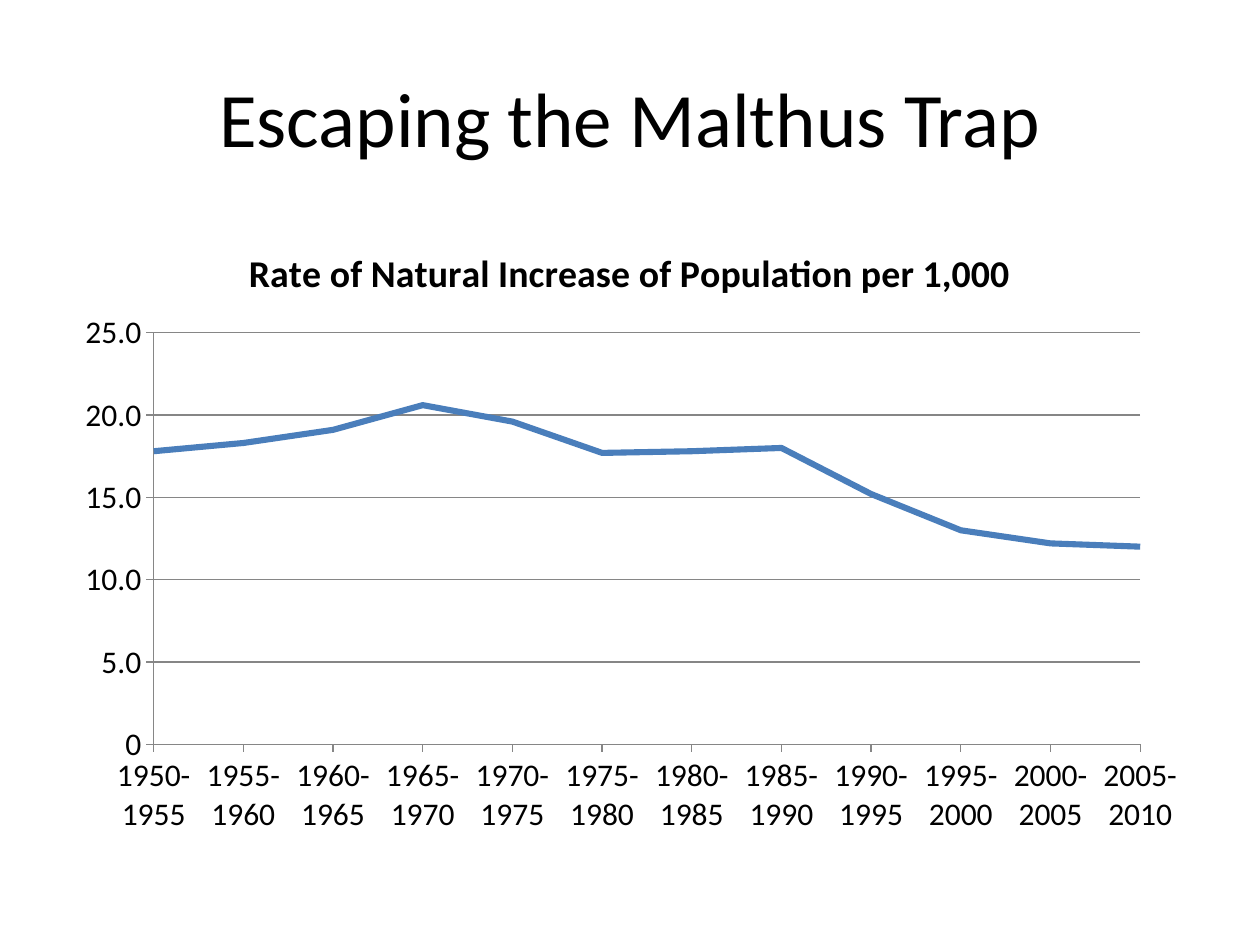
from dataclasses import dataclass

from lxml.etree import SubElement
from pptx import Presentation
from pptx.chart.data import CategoryChartData
from pptx.dml.color import RGBColor
from pptx.enum.chart import XL_CHART_TYPE, XL_TICK_MARK
from pptx.enum.text import MSO_ANCHOR, PP_ALIGN
from pptx.oxml.ns import qn
from pptx.util import Inches, Pt


@dataclass(frozen=True)
class Theme:
    font: str = "Calibri"
    text: RGBColor = RGBColor(0x00, 0x00, 0x00)
    axis: RGBColor = RGBColor(0x86, 0x86, 0x86)
    series: RGBColor = RGBColor(0x4A, 0x7E, 0xBB)
    heading_size: float = 44
    chart_title_size: float = 21.6
    label_size: float = 18
    axis_width: float = 0.75
    series_width: float = 3.5


@dataclass(frozen=True)
class Area:
    """A rectangle given as shares of whatever contains it."""
    left: float
    top: float
    width: float
    height: float

    def on_slide(self) -> tuple:
        return (int(SLIDE_WIDTH * self.left), int(SLIDE_HEIGHT * self.top),
                int(SLIDE_WIDTH * self.width), int(SLIDE_HEIGHT * self.height))


THEME = Theme()
SLIDE_WIDTH, SLIDE_HEIGHT = Inches(10), Inches(7.5)
HEADING_AREA = Area(0.05, 0.04, 0.9, 1 / 6)
CHART_AREA = Area(0.05, 1.75 / 7.5, 0.9, 0.66)
PLOT_AREA = Area(0.08, 0.18, 0.87, 0.66)
FIRST_YEAR, PERIOD_YEARS = 1950, 5
INCREASE_RATES = (17.8, 18.3, 19.1, 20.6, 19.6, 17.7,
                  17.8, 18, 15.2, 13, 12.2, 12)


def style_font(font, size: float, bold: bool = False) -> None:
    font.name = THEME.font
    font.size = Pt(size)
    font.bold = bold
    font.color.rgb = THEME.text


def style_line(line, color: RGBColor, width: float) -> None:
    line.color.rgb = color
    line.width = Pt(width)


def add_heading(slide, text: str) -> None:
    box = slide.shapes.add_textbox(*HEADING_AREA.on_slide())
    frame = box.text_frame
    frame.word_wrap = True
    frame.vertical_anchor = MSO_ANCHOR.MIDDLE
    para = frame.paragraphs[0]
    para.alignment = PP_ALIGN.CENTER
    span = para.add_run()
    span.text = text
    style_font(span.font, THEME.heading_size)


def place_plot(chart, area: Area) -> None:
    """Fix the inner plot rectangle, which python-pptx cannot set itself."""
    plot_area = chart.plots[0]._element.getparent()
    for old in plot_area.findall(qn("c:layout")):
        plot_area.remove(old)
    layout = SubElement(plot_area, qn("c:layout"))
    plot_area.insert(0, layout)
    manual = SubElement(layout, qn("c:manualLayout"))
    settings = (("layoutTarget", "inner"), ("xMode", "edge"), ("yMode", "edge"),
                ("x", area.left), ("y", area.top),
                ("w", area.width), ("h", area.height))
    for name, value in settings:
        SubElement(manual, qn(f"c:{name}")).set("val", str(value))


def start_line_on_axis(value_axis) -> None:
    """Put the first and last points on the edges of the plot."""
    axis = value_axis._element
    for old in axis.findall(qn("c:crossBetween")):
        axis.remove(old)
    crossing = SubElement(axis, qn("c:crossBetween"))
    crossing.set("val", "midCat")
    axis.find(qn("c:majorUnit")).addprevious(crossing)


def add_rate_chart(slide, title: str) -> None:
    data = CategoryChartData()
    starts = (FIRST_YEAR + PERIOD_YEARS * i for i in range(len(INCREASE_RATES)))
    data.categories = [f"{year}-{year + PERIOD_YEARS}" for year in starts]
    data.add_series("Series 1", INCREASE_RATES)
    chart = slide.shapes.add_chart(
        XL_CHART_TYPE.LINE, *CHART_AREA.on_slide(), data).chart
    style_font(chart.font, THEME.label_size)
    chart.has_legend = False
    chart.has_title = True
    span = chart.chart_title.text_frame.paragraphs[0].add_run()
    span.text = title
    style_font(span.font, THEME.chart_title_size, bold=True)
    chart.chart_title.include_in_layout = False

    values = chart.value_axis
    values.minimum_scale, values.maximum_scale, values.major_unit = 0, 25, 5
    values.tick_labels.number_format = r"##0.0;\-##0.0;0"
    values.tick_labels.number_format_is_linked = False
    values.has_major_gridlines = True
    style_line(values.major_gridlines.format.line, THEME.axis, THEME.axis_width)
    for axis in (chart.category_axis, values):
        axis.major_tick_mark = XL_TICK_MARK.OUTSIDE
        axis.minor_tick_mark = XL_TICK_MARK.NONE
        style_line(axis.format.line, THEME.axis, THEME.axis_width)
    start_line_on_axis(values)

    plot = chart.plots[0]
    plot.vary_by_categories = False
    rates = plot.series[0]
    rates.smooth = False
    style_line(rates.format.line, THEME.series, THEME.series_width)
    place_plot(chart, PLOT_AREA)


def main() -> None:
    deck = Presentation()
    deck.slide_width, deck.slide_height = SLIDE_WIDTH, SLIDE_HEIGHT
    page = deck.slides.add_slide(deck.slide_layouts[6])
    add_heading(page, "Escaping the Malthus Trap")
    add_rate_chart(page, "Rate of Natural Increase of Population per 1,000")
    deck.save("out.pptx")


if __name__ == "__main__":
    main()
